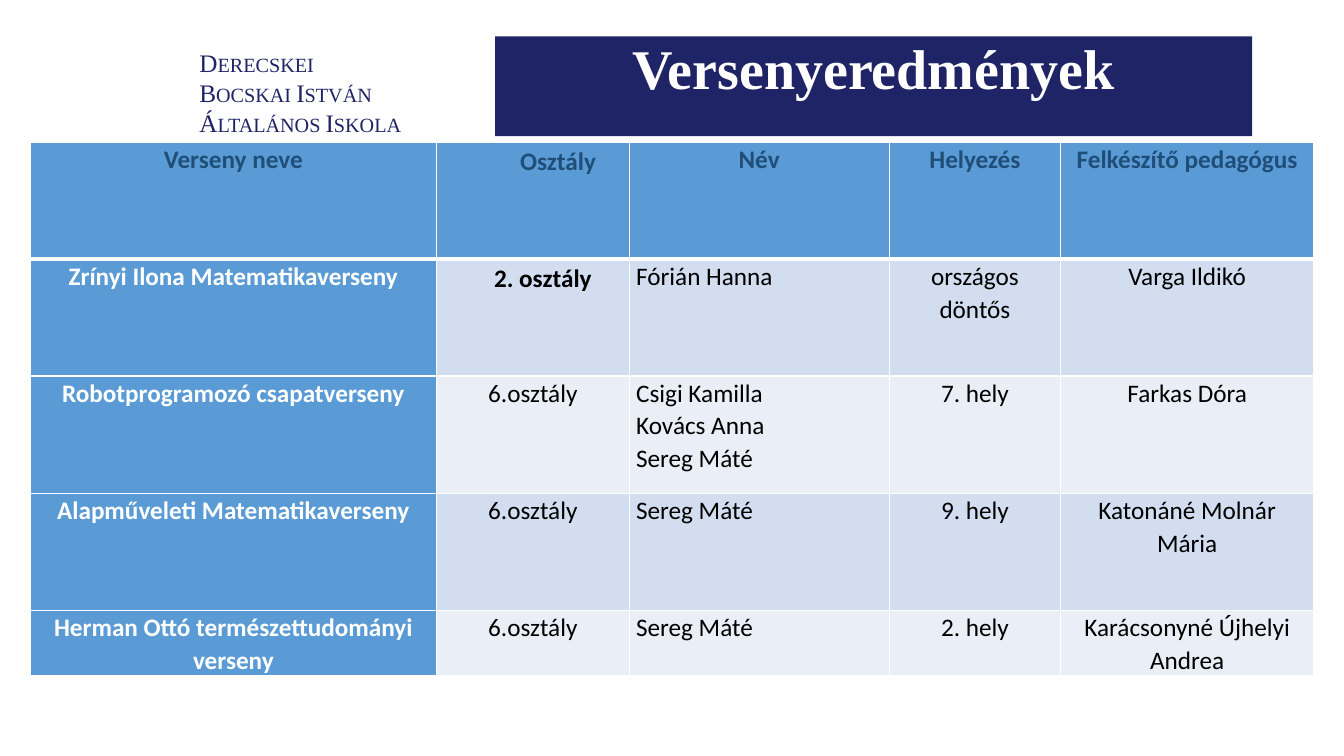
"""Build the school's slide of competition results."""
from lxml import etree
from pptx import Presentation, util as u
from pptx.dml.color import RGBColor
from pptx.enum import shapes, text
from pptx.oxml import ns

NAVY, BLUE, WHITE = "1F2466", "5B9BD5", "FFFFFF"
BANDS = ["EAEFF7", "D2DEEF"]
MID, LEFT = text.PP_ALIGN.CENTER, text.PP_ALIGN.LEFT


def paint(fill, tone):
    fill.solid()
    fill.fore_color.rgb = RGBColor.from_string(tone)


def write(par, words, face, size, tone, bold=False):
    run = par.add_run()
    run.text = words
    run.font.name = face
    run.font.size = u.Pt(size)
    run.font.bold = bold
    paint(run.font.fill, tone)
    return run


deck = Presentation()
deck.slide_width, deck.slide_height = u.Inches(13.33), u.Inches(7.5)
slide = deck.slides.add_slide(deck.slide_layouts[6])

school = slide.shapes.add_textbox(u.Inches(1.88), u.Inches(0.42), u.Inches(6.67), u.Inches(1.31))
frame = school.text_frame
frame.word_wrap = True
for i, line in enumerate(["Derecskei", "Bocskai István", "Általános Iskola"]):
    par = frame.add_paragraph() if i else frame.paragraphs[0]
    run = write(par, line, "Times New Roman", 18, NAVY)
    run.font._element.set("cap", "small")

title = slide.shapes.add_shape(shapes.MSO_SHAPE.RECTANGLE, u.Inches(4.91), u.Inches(0.36),
                               u.Inches(7.51), u.Inches(0.99))
title.shadow.inherit = False
paint(title.fill, NAVY)
title.line.fill.background()
title.text_frame.vertical_anchor = text.MSO_ANCHOR.TOP
par = title.text_frame.paragraphs[0]
par.alignment = MID
par.line_spacing = 0.9
write(par, "Versenyeredmények", "Times New Roman", 40, WHITE, True)

rows = [
    ["Verseny neve", "Osztály", "Név", "Helyezés", "Felkészítő pedagógus"],
    ["Zrínyi Ilona Matematikaverseny", "2. osztály", "Fórián Hanna", "országos döntős", "Varga Ildikó"],
    ["Robotprogramozó csapatverseny", "6.osztály", "Csigi Kamilla\nKovács Anna\nSereg Máté",
     "7. hely", "Farkas Dóra"],
    ["Alapműveleti Matematikaverseny", "6.osztály", "Sereg Máté", "9. hely", "Katonáné Molnár Mária"],
    ["Herman Ottó természettudományi verseny", "6.osztály", "Sereg Máté", "2. hely",
     "Karácsonyné Újhelyi Andrea"],
]
wides = [4.03, 1.91, 2.58, 1.7, 2.51]
highs = [1.16, 1.16, 1.17, 1.16, 0.59]
grid = slide.shapes.add_table(len(rows), len(wides), u.Inches(0.3), u.Inches(1.41),
                              u.Inches(sum(wides)), u.Inches(sum(highs))).table
for col, wide in zip(grid.columns, wides):
    col.width = u.Inches(wide)
for row, high in zip(grid.rows, highs):
    row.height = u.Inches(high)

for r, row in enumerate(rows):
    for c, words in enumerate(row):
        cell = grid.cell(r, c)
        cell.margin_left = cell.margin_right = u.Inches(0.07)
        cell.margin_top = cell.margin_bottom = 0
        props = cell._tc.get_or_add_tcPr()
        for side in "LRTB":
            thick = (r, side) in [(0, "B"), (1, "T")]
            edge = etree.SubElement(props, ns.qn("a:ln" + side), w=str(u.Pt(3 if thick else 1)))
            solid = etree.SubElement(edge, ns.qn("a:solidFill"))
            etree.SubElement(solid, ns.qn("a:srgbClr"), val=WHITE)
        paint(cell.fill, BLUE if r == 0 or c == 0 else BANDS[r % 2])

        tone = "1F4E79" if r == 0 else WHITE if c == 0 else "000000"
        inset = c == 1 and r < 2
        bold = r == 0 or c == 0 or inset
        for i, line in enumerate(words.split("\n")):
            par = cell.text_frame.add_paragraph() if i else cell.text_frame.paragraphs[0]
            par.alignment = LEFT if r and (c == 2 or inset) else MID
            par.line_spacing = 1.15 if inset else 1.07
            if inset:
                par._p.get_or_add_pPr().set("marL", str(u.Inches(0.5)))
            write(par, line, "Calibri", 18, tone, bold)

deck.save("out.pptx")
